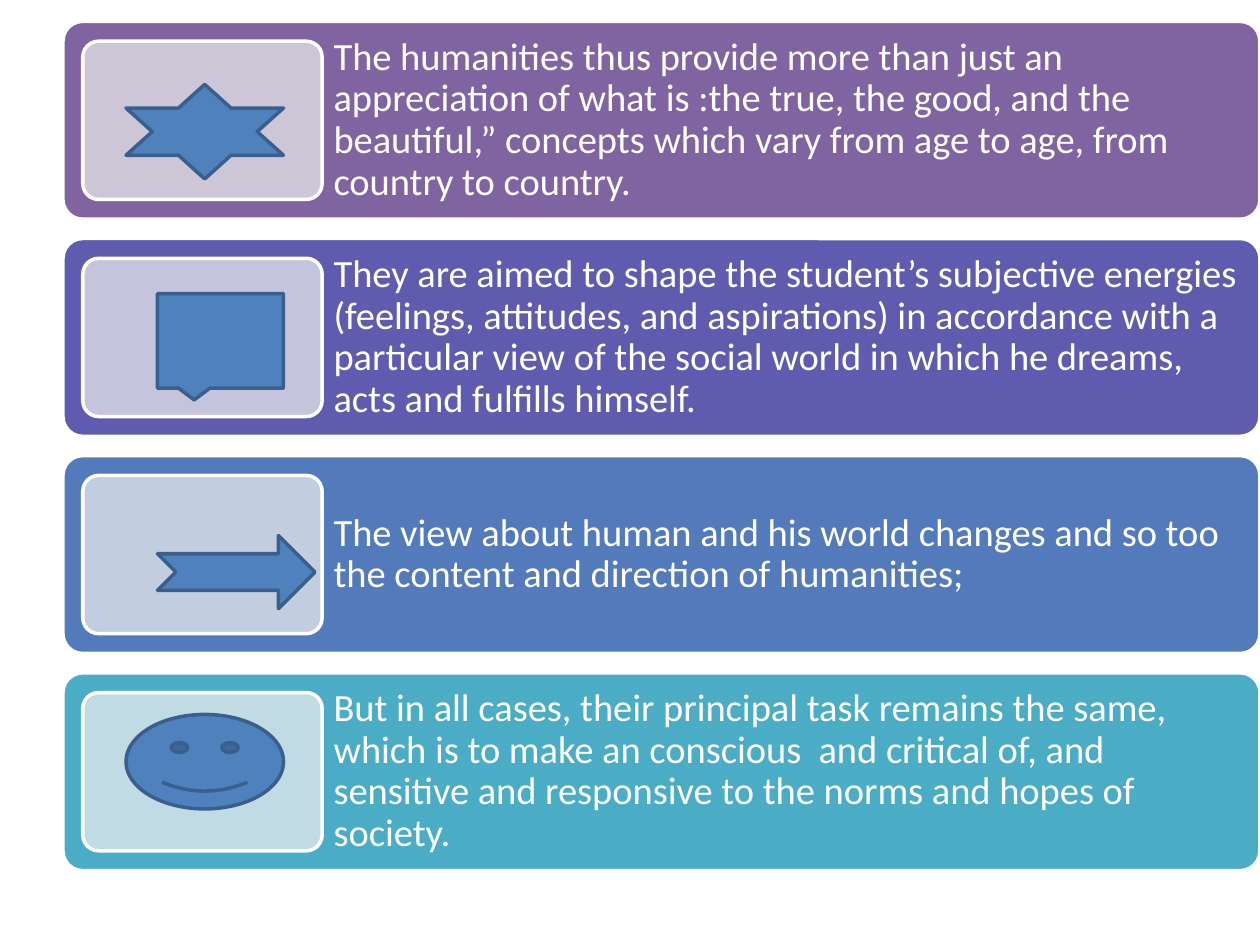
import pptx
import pptx.util
import pptx.dml.color
import pptx.enum.shapes
import pptx.enum.text

Inches = pptx.util.Inches
Pt = pptx.util.Pt
MSO = pptx.enum.shapes.MSO_SHAPE


def rgb(value):
    return pptx.dml.color.RGBColor.from_string(value)


def add_shape(s, kind, box, fill, line):
    sp = s.shapes.add_shape(kind, *[Inches(v) for v in box])
    sp.shadow.inherit = False
    sp.fill.solid()
    sp.fill.fore_color.rgb = rgb(fill)
    sp.line.color.rgb = rgb(line)
    sp.line.width = Pt(2)
    if kind == MSO.ROUNDED_RECTANGLE:
        sp.adjustments[0] = 0.1
    return sp


prs = pptx.Presentation()
prs.slide_width, prs.slide_height = Inches(10), Inches(7.5)
s = prs.slides.add_slide(prs.slide_layouts[6])

left, top, width, height = 0.5, 0.17, 9.5, 1.57
pitch = (5.34 - top) / 3
gap = 0.1 * height
tile_w = 0.2 * width
text_left = left + gap + tile_w

rows = [
    ("8064A2", "CDC6D7",
     "The humanities thus provide more than just an appreciation of what is :the true, the good, and the beautiful,” concepts which vary from age to age, from country to country."),
    ("5F5BAE", "C5C4DC",
     "They are aimed to shape the student’s subjective energies (feelings, attitudes, and aspirations) in accordance with a particular view of the social world in which he dreams, acts and fulfills himself."),
    ("537ABA", "C3CDE0",
     "The view about human and his world changes and so too the content and direction of humanities;"),
    ("4BACC6", "C1DBE5",
     "But in all cases, their principal task remains the same, which is to make an conscious  and critical of, and sensitive and responsive to the norms and hopes of society."),
]
icons = [
    (MSO.STAR_6_POINT, (1, 0.67, 1.25, 0.75)),
    (MSO.RECTANGULAR_CALLOUT, (1.25, 2.33, 1, 0.75)),
    (MSO.NOTCHED_RIGHT_ARROW, (1.25, 4.25, 1.25, 0.58)),
    (MSO.SMILEY_FACE, (1, 5.67, 1.25, 0.75)),
]
frame_format = {
    "word_wrap": True,
    "vertical_anchor": pptx.enum.text.MSO_ANCHOR.MIDDLE,
    "margin_left": Inches(0.09),
    "margin_right": Inches(0.09),
    "margin_top": Inches(0.09),
    "margin_bottom": Inches(0.09),
}
font_format = {"name": "Calibri", "size": Pt(22)}

for i, (band, tile, text) in enumerate(rows):
    y = top + i * pitch
    add_shape(s, MSO.ROUNDED_RECTANGLE, (left, y, width, height), band, "FFFFFF")
    box = (text_left, y, left + width - text_left, height)
    tf = s.shapes.add_textbox(*[Inches(v) for v in box]).text_frame
    for name, value in frame_format.items():
        setattr(tf, name, value)
    p = tf.paragraphs[0]
    p.line_spacing = 0.9
    r = p.add_run()
    r.text = text
    for name, value in font_format.items():
        setattr(r.font, name, value)
    r.font.color.rgb = rgb("FFFFFF")
    add_shape(s, MSO.ROUNDED_RECTANGLE,
              (left + gap, y + gap, tile_w, height - 2 * gap), tile, "FFFFFF")

for kind, box in icons:
    add_shape(s, kind, box, "4F81BD", "3A5F8C")

prs.save("out.pptx")
